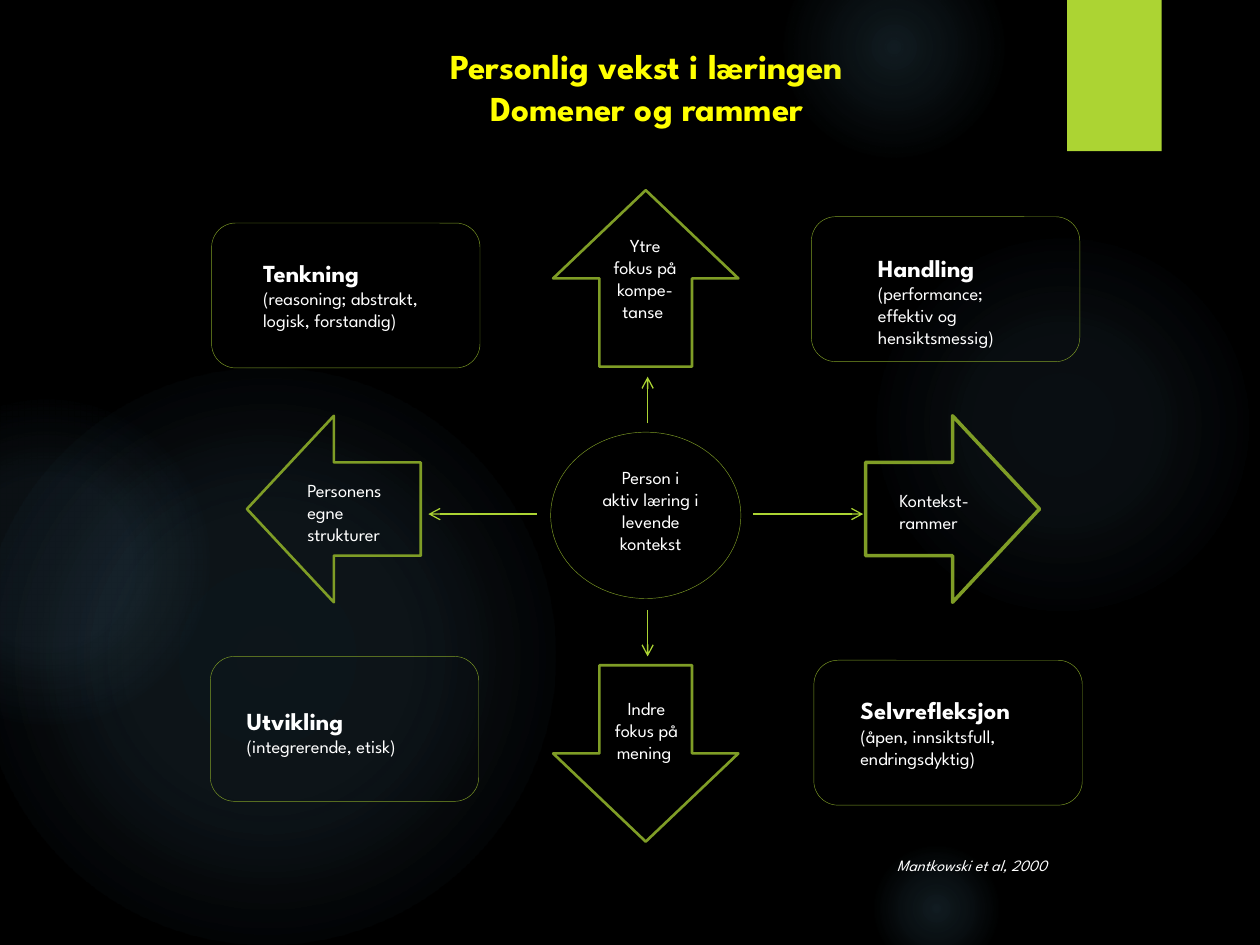
from dataclasses import dataclass

from lxml import etree
from pptx import Presentation
from pptx.dml.color import RGBColor
from pptx.enum.shapes import MSO_CONNECTOR, MSO_SHAPE
from pptx.enum.text import MSO_ANCHOR, PP_ALIGN
from pptx.oxml import parse_xml
from pptx.oxml.ns import nsdecls, qn
from pptx.util import Inches, Pt


@dataclass
class Theme:
    font: str = "League Spartan"
    background: str = "000000"
    text: str = "FFFFFF"
    title: str = "FFFF00"
    accent: str = "ACD433"
    outline: str = "7F9D26"
    glow: str = "7AC4F0"
    title_size: float = 20
    heading_size: float = 14
    body_size: float = 10.5
    credit_size: float = 9


theme = Theme()


def add_shape(kind, x, y, w, h, fill=None, line=None, width=0):
    s = slide.shapes.add_shape(kind, Inches(x), Inches(y), Inches(w), Inches(h))
    s.shadow.inherit = False
    if fill:
        s.fill.solid()
        s.fill.fore_color.rgb = RGBColor.from_string(fill)
    else:
        s.fill.background()
    if line:
        s.line.color.rgb = RGBColor.from_string(line)
        s.line.width = Pt(width)
    else:
        s.line.fill.background()
    return s


def write(s, lines, color=theme.text, align=PP_ALIGN.LEFT, anchor=MSO_ANCHOR.TOP, wrap=True):
    tf = s.text_frame
    tf.text = "\n".join(text for text, *_ in lines)
    tf.word_wrap = wrap
    tf.vertical_anchor = anchor
    for p, (_, size, bold, italic) in zip(tf.paragraphs, lines):
        p.alignment = align
        for r in p.runs:
            r.font.name = theme.font
            r.font.size = Pt(size)
            r.font.bold = bold
            r.font.italic = italic
            r.font.color.rgb = RGBColor.from_string(color)


prs = Presentation()
prs.slide_width, prs.slide_height = Inches(10), Inches(7.5)
slide = prs.slides.add_slide(prs.slide_layouts[5])
slide.background.fill.solid()
slide.background.fill.fore_color.rgb = RGBColor.from_string(theme.background)

glows = [
    (6.89, 1.83, 3.08, [(0, 7), (36, 6), (69, 0)]),
    (6.22, -0.5, 1.75, [(0, 14), (36, 7), (73, 0)]),
    (6.89, 6.67, 1.08, [(0, 14), (36, 7), (66, 0)]),
    (-0.17, 2.92, 4.58, [(0, 11), (36, 10), (75, 0)]),
    (-0.92, 3.17, 2.58, [(0, 8), (36, 8), (72, 0)]),
]
for x, y, size, stops in glows:
    s = add_shape(MSO_SHAPE.OVAL, x, y, size, size)
    stop_xml = "".join(
        f'<a:gs pos="{pos * 1000}"><a:srgbClr val="{theme.glow}">'
        f'<a:alpha val="{alpha * 1000}"/></a:srgbClr></a:gs>'
        for pos, alpha in stops
    )
    gradient = parse_xml(
        f'<a:gradFill {nsdecls("a")} rotWithShape="1"><a:gsLst>{stop_xml}</a:gsLst>'
        '<a:path path="circle"><a:fillToRect l="50000" t="50000" r="50000" b="50000"/>'
        "</a:path></a:gradFill>"
    )
    spPr = s.element.spPr
    spPr.replace(spPr.find(qn("a:noFill")), gradient)

add_shape(MSO_SHAPE.RECTANGLE, 8.47, 0, 0.75, 1.2, fill=theme.accent)

outlines = [
    (MSO_SHAPE.OVAL, 4.37, 3.43, 1.51, 1.32, 0.25),
    (MSO_SHAPE.LEFT_ARROW, 1.96, 3.3, 1.38, 1.48, 1.5),
    (MSO_SHAPE.RIGHT_ARROW, 6.87, 3.3, 1.38, 1.48, 2),
    (MSO_SHAPE.DOWN_ARROW, 4.39, 5.28, 1.47, 1.4, 1.5),
    (MSO_SHAPE.UP_ARROW, 4.39, 1.51, 1.47, 1.4, 1.5),
]
for kind, x, y, w, h, width in outlines:
    add_shape(kind, x, y, w, h, line=theme.outline, width=width)

for x, y in [(1.68, 1.77), (1.67, 5.21), (6.46, 5.24), (6.44, 1.72)]:
    add_shape(MSO_SHAPE.ROUNDED_RECTANGLE, x, y, 2.13, 1.15, line=theme.outline, width=0.25)

domains = [
    (1.99, 2, 1.45, 0.87, "Tenkning", "(reasoning; abstrakt, logisk, forstandig)"),
    (6.87, 1.96, 1.34, 0.87, "Handling", "(performance; effektiv og hensiktsmessig)"),
    (1.86, 5.55, 1.82, 0.52, "Utvikling", "(integrerende, etisk)"),
    (6.73, 5.47, 1.82, 0.69, "Selvrefleksjon", "(åpen, innsiktsfull, endringsdyktig)"),
]
for x, y, w, h, heading, detail in domains:
    s = slide.shapes.add_textbox(Inches(x), Inches(y), Inches(w), Inches(h))
    write(s, [(heading, theme.heading_size, True, False), (detail, theme.body_size, False, False)])

labels = [
    (4.74, 5.48, 0.78, 0.81, "Indre fokus på mening ", PP_ALIGN.CENTER),
    (2.34, 3.75, 0.95, 0.63, "Personens egne strukturer", PP_ALIGN.LEFT),
    (4.73, 1.81, 0.78, 0.98, "Ytre fokus på kompe-tanse ", PP_ALIGN.CENTER),
    (7.04, 3.83, 0.92, 0.45, "Kontekst-rammer", PP_ALIGN.LEFT),
    (4.68, 3.65, 0.97, 0.98, "Person i aktiv læring i levende kontekst", PP_ALIGN.CENTER),
]
for x, y, w, h, text, align in labels:
    s = slide.shapes.add_textbox(Inches(x), Inches(y), Inches(w), Inches(h))
    write(s, [(text, theme.body_size, False, False)], align=align)

arrows = [
    (5.98, 4.08, 6.85, 4.08),
    (5.14, 3.36, 5.14, 2.99),
    (4.26, 4.08, 3.4, 4.08),
    (5.14, 4.84, 5.14, 5.21),
]
for ends in arrows:
    line = slide.shapes.add_connector(MSO_CONNECTOR.STRAIGHT, *map(Inches, ends))
    line.line.color.rgb = RGBColor.from_string(theme.accent)
    line.line.width = Pt(0.75)
    spPr = line.element.spPr
    etree.SubElement(spPr.find(qn("a:ln")), qn("a:tailEnd"), type="arrow")
    etree.SubElement(spPr, qn("a:effectLst"))

title = slide.shapes.title
title.left, title.top, title.width, title.height = map(Inches, (3.31, 0.3, 3.65, 0.77))
write(
    title,
    [(text, theme.title_size, True, False) for text in ("Personlig vekst i læringen", "Domener og rammer")],
    theme.title, PP_ALIGN.CENTER, MSO_ANCHOR.TOP, False,
)
for p in title.text_frame.paragraphs:
    p.space_before = Pt(0)

credit = slide.shapes.add_textbox(Inches(7.02), Inches(6.74), Inches(1.57), Inches(0.25))
write(credit, [("Mantkowski et al, 2000", theme.credit_size, False, True)], wrap=False)

prs.save("out.pptx")
